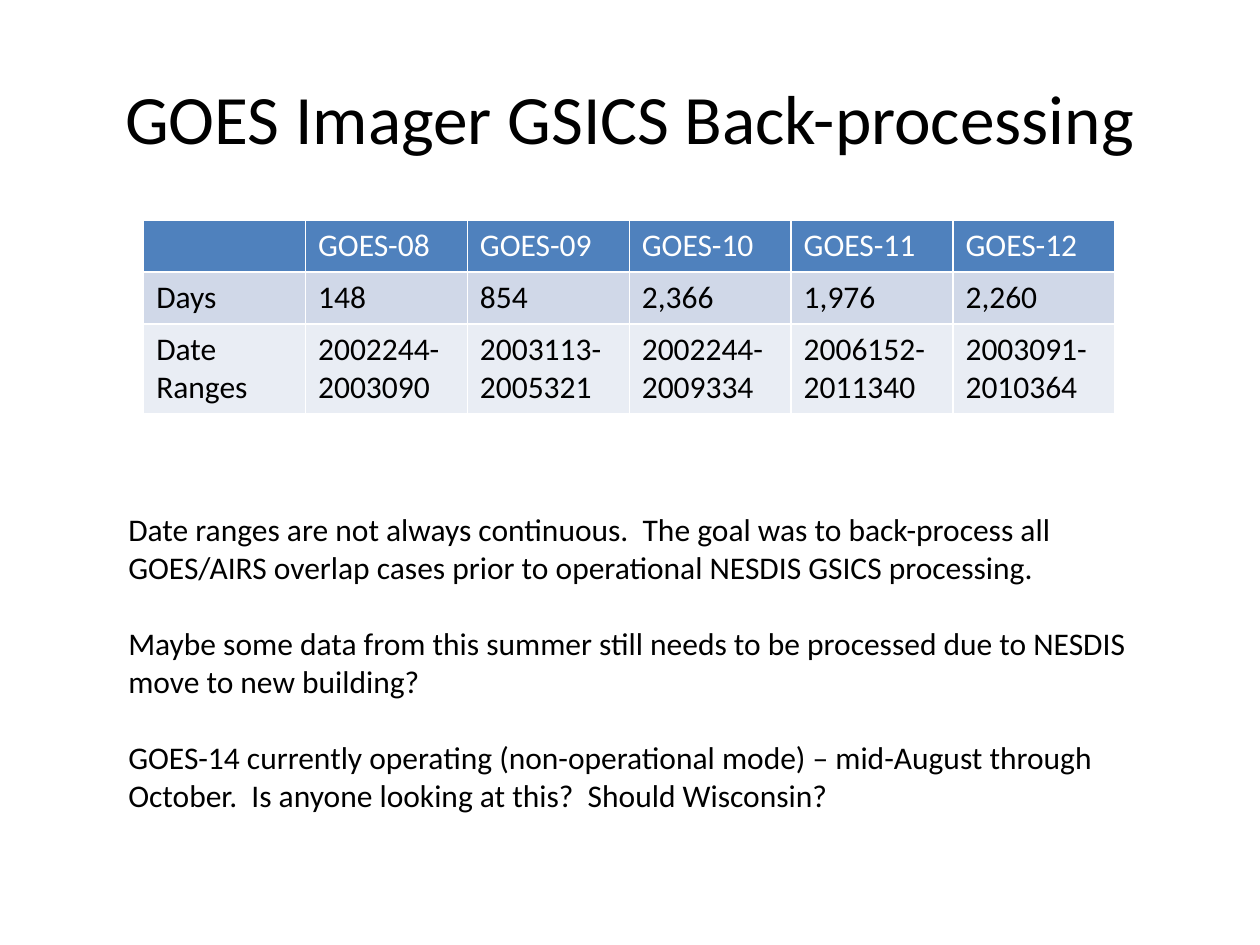
"""Build the GOES Imager GSICS back-processing slide."""
from pptx import Presentation
from pptx.dml.color import RGBColor as RGB
from pptx.enum.text import MSO_ANCHOR as Anchor, PP_ALIGN as Align
from pptx.util import Inches, Pt

BLACK = RGB(0x00, 0x00, 0x00)
WHITE = RGB(0xFF, 0xFF, 0xFF)
BLUE = RGB(0x4F, 0x81, 0xBD)
PALE = RGB(0xD0, 0xD8, 0xE8)
MIST = RGB(0xE9, 0xED, 0xF4)


def style(par, size, color):
    for run in par.runs:
        run.font.name = "Calibri"
        run.font.size = Pt(size)
        run.font.bold = False
        run.font.color.rgb = color


deck = Presentation()
deck.slide_width, deck.slide_height = Inches(10), Inches(7.5)
slide = deck.slides.add_slide(deck.slide_layouts[5])

title = slide.shapes.title
title.left, title.top = Inches(0.5), Inches(0.3)
title.width, title.height = Inches(9), Inches(1.25)
frame = title.text_frame
frame.text = "GOES Imager GSICS Back-processing"
frame.vertical_anchor = Anchor.MIDDLE
frame.paragraphs[0].alignment = Align.CENTER
style(frame.paragraphs[0], 39.6, BLACK)

rows = [
    (0.41, BLUE, WHITE, ["", "GOES-08", "GOES-09", "GOES-10", "GOES-11", "GOES-12"]),
    (0.41, PALE, BLACK, ["Days", "148", "854", "2,366", "1,976", "2,260"]),
    (0.7, MIST, BLACK, ["Date Ranges", "2002244-2003090", "2003113-2005321",
                        "2002244-2009334", "2006152-2011340", "2003091-2010364"]),
]
table = slide.shapes.add_table(
    3, 6, Inches(1.14), Inches(1.75), Inches(7.71), Inches(1.51)).table
for r, (height, fill, ink, texts) in enumerate(rows):
    table.rows[r].height = Inches(height)
    for c, text in enumerate(texts):
        cell = table.cell(r, c)
        cell.text_frame.text = text
        cell.fill.solid()
        cell.fill.fore_color.rgb = fill
        style(cell.text_frame.paragraphs[0], 18, ink)

notes = [
    "Date ranges are not always continuous.  The goal was to back-process all "
    "GOES/AIRS overlap cases prior to operational NESDIS GSICS processing.",
    "Maybe some data from this summer still needs to be processed due to NESDIS "
    "move to new building?",
    "GOES-14 currently operating (non-operational mode) – mid-August through "
    "October.  Is anyone looking at this?  Should Wisconsin?",
]
box = slide.shapes.add_textbox(Inches(0.92), Inches(4), Inches(8.17), Inches(2.52))
frame = box.text_frame
frame.word_wrap = True
for i, note in enumerate(notes):
    par = frame.add_paragraph() if i else frame.paragraphs[0]
    par.text = note
    par.space_before = Pt(22 if i else 0)
    style(par, 18, BLACK)

deck.save("out.pptx")
